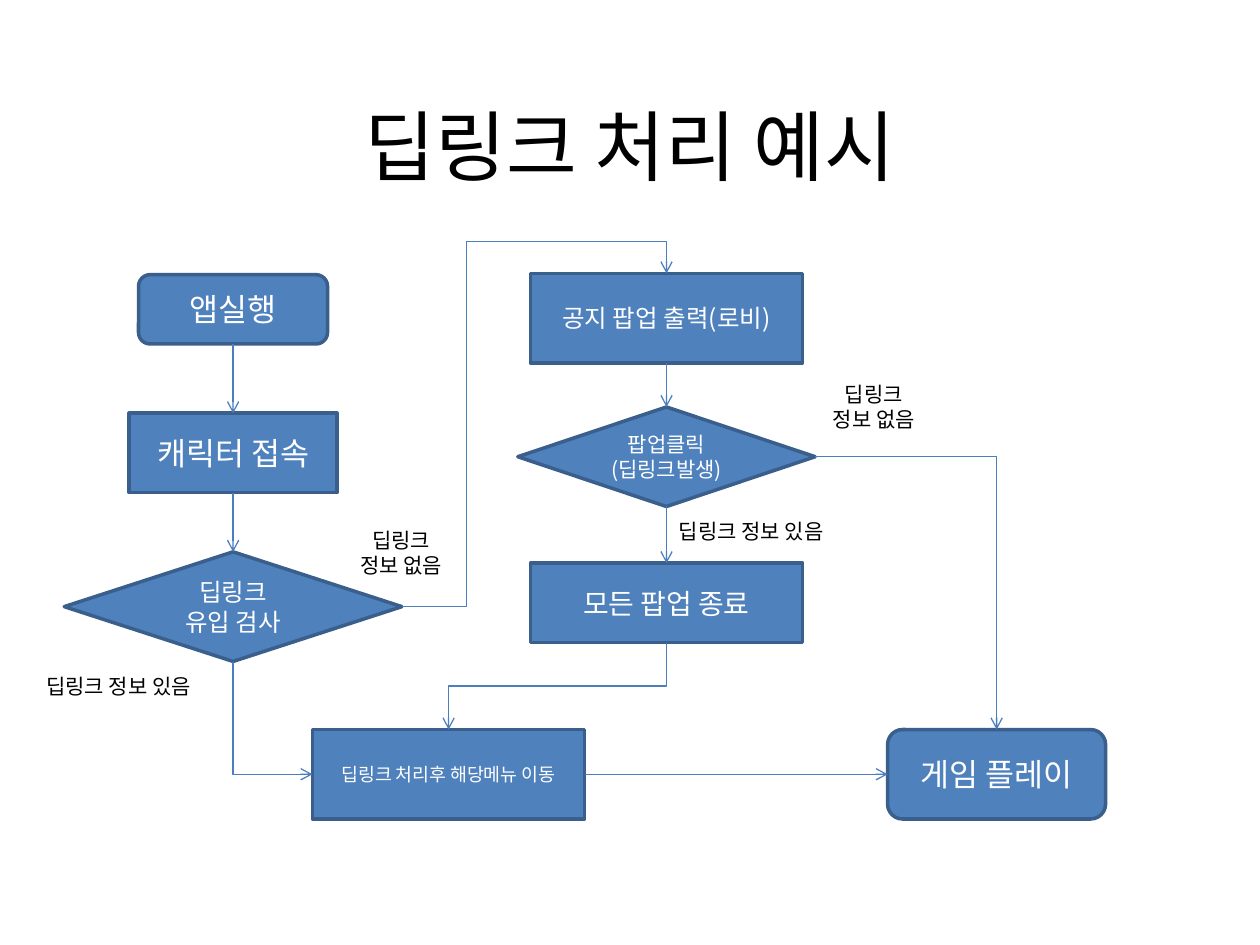
from lxml.etree import SubElement
from pptx import Presentation
from pptx.dml.color import RGBColor
from pptx.enum.shapes import MSO_CONNECTOR as CX, MSO_SHAPE as SH
from pptx.enum.text import MSO_ANCHOR as VA, MSO_AUTO_SIZE as FIT, PP_ALIGN as AL
from pptx.oxml.ns import qn
from pptx.util import Inches, Pt

FONT = "Noto Sans CJK KR"
TOP, LEFT, BOTTOM, RIGHT = range(4)
rgb = RGBColor.from_string


def write(sp, text, size, color, align, frame):
    tf = sp.text_frame
    for name, value in frame.items():
        setattr(tf, name, value)
    for i, line in enumerate(text.split("\n")):
        p = tf.paragraphs[0] if i == 0 else tf.add_paragraph()
        p.alignment = align
        r = p.add_run()
        r.text = line
        for name, value in {"size": Pt(size), "name": FONT}.items():
            setattr(r.font, name, value)
        r.font.color.rgb = rgb(color)
        SubElement(r.font._element, qn("a:ea"), typeface=FONT)


prs = Presentation()
prs.slide_width, prs.slide_height = Inches(10), Inches(7.5)
s = prs.slides.add_slide(prs.slide_layouts[6])

middle = {"word_wrap": True, "vertical_anchor": VA.MIDDLE}
fitted = {"word_wrap": False, "auto_size": FIT.SHAPE_TO_FIT_TEXT}

title = s.shapes.add_textbox(Inches(0.75), Inches(0.68), Inches(8.5), Inches(0.94))
write(title, "딥링크 처리 예시", 44, "000000", AL.CENTER, middle)

left_x, mid_x, menu_x, play_x = 1.85, 5.29, 3.56, 7.91
steps = {
    "launch": (SH.ROUNDED_RECTANGLE, left_x, 2.18, 1.5, 0.55, "앱실행", 18),
    "check": (SH.DIAMOND, left_x, 4.38, 2.68, 0.87, "딥링크\n유입 검사", 14),
    "login": (SH.RECTANGLE, left_x, 3.28, 1.65, 0.63, "캐릭터 접속", 18),
    "notice": (SH.RECTANGLE, mid_x, 2.17, 2.16, 0.71, "공지 팝업 출력(로비)", 14),
    "menu": (SH.RECTANGLE, menu_x, 5.79, 2.16, 0.71, "딥링크 처리후 해당메뉴 이동", 10.5),
    "click": (SH.DIAMOND, mid_x, 3.23, 2.36, 0.79, "팝업클릭\n(딥링크발생)", 12),
    "close": (SH.RECTANGLE, mid_x, 4.47, 2.16, 0.63, "모든 팝업 종료", 16),
    "play": (SH.ROUNDED_RECTANGLE, play_x, 5.79, 1.73, 0.71, "게임 플레이", 18),
}
nodes = {}
for key, (kind, cx, y, w, h, text, size) in steps.items():
    sp = s.shapes.add_shape(kind, Inches(cx - w / 2), Inches(y), Inches(w), Inches(h))
    sp.shadow.inherit = False
    sp.fill.solid()
    sp.fill.fore_color.rgb = rgb("4F81BD")
    sp.line.color.rgb = rgb("3A5F8C")
    sp.line.width = Pt(2)
    write(sp, text, size, "FFFFFF", AL.CENTER, middle)
    nodes[key] = sp

flows = [
    ("launch", BOTTOM, "login", TOP, "line", 0, "", []),
    ("check", RIGHT, "notice", TOP, "bentConnector4", 0, "flipV", [24300, 109500]),
    ("login", BOTTOM, "check", TOP, "line", 0, "", []),
    ("check", BOTTOM, "menu", LEFT, "bentConnector2", 270, "flipH", []),
    ("notice", BOTTOM, "click", TOP, "line", 0, "", []),
    ("click", BOTTOM, "close", TOP, "line", 0, "", []),
    ("close", BOTTOM, "menu", TOP, "bentConnector3", 90, "", [50000]),
    ("menu", RIGHT, "play", LEFT, "line", 0, "", []),
    ("click", RIGHT, "play", TOP, "bentConnector2", 0, "", []),
]
for start, start_side, end, end_side, preset, turn, flip, bends in flows:
    cn = s.shapes.add_connector(CX.STRAIGHT, 0, 0, 0, 0)
    cn.begin_connect(nodes[start], start_side)
    cn.end_connect(nodes[end], end_side)
    cn.line.color.rgb = rgb("4B7EBC")
    cn.line.width = Pt(0.75)
    SubElement(cn.line._get_or_add_ln(), qn("a:tailEnd"), type="arrow")
    pr = cn._element.spPr
    SubElement(pr, qn("a:effectLst"))
    geom = pr.find(qn("a:prstGeom"))
    geom.set("prst", preset)
    for i, bend in enumerate(bends, 1):
        SubElement(geom.find(qn("a:avLst")), qn("a:gd"), name=f"adj{i}", fmla=f"val {bend}")
    xfrm = pr.find(qn("a:xfrm"))
    for name in ("flipH", "flipV"):
        xfrm.set(name, str(int(name == flip)))
    if turn:
        w, h = cn.width, cn.height
        cn.left, cn.top = cn.left + (w - h) // 2, cn.top + (h - w) // 2
        cn.width, cn.height = h, w
        xfrm.set("rot", str(turn * 60000))

has_link, no_link = "딥링크 정보 있음", "딥링크\n정보 없음"
labels = [
    (0.27, 5.3, 1.5, 0.3, has_link, AL.LEFT),
    (2.72, 4.14, 0.93, 0.5, no_link, AL.CENTER),
    (6.47, 2.98, 0.93, 0.5, no_link, AL.CENTER),
    (5.29, 4.07, 1.5, 0.3, has_link, AL.LEFT),
]
for x, y, w, h, text, align in labels:
    sp = s.shapes.add_textbox(Inches(x), Inches(y), Inches(w), Inches(h))
    write(sp, text, 12, "000000", align, fitted)

prs.save("out.pptx")
